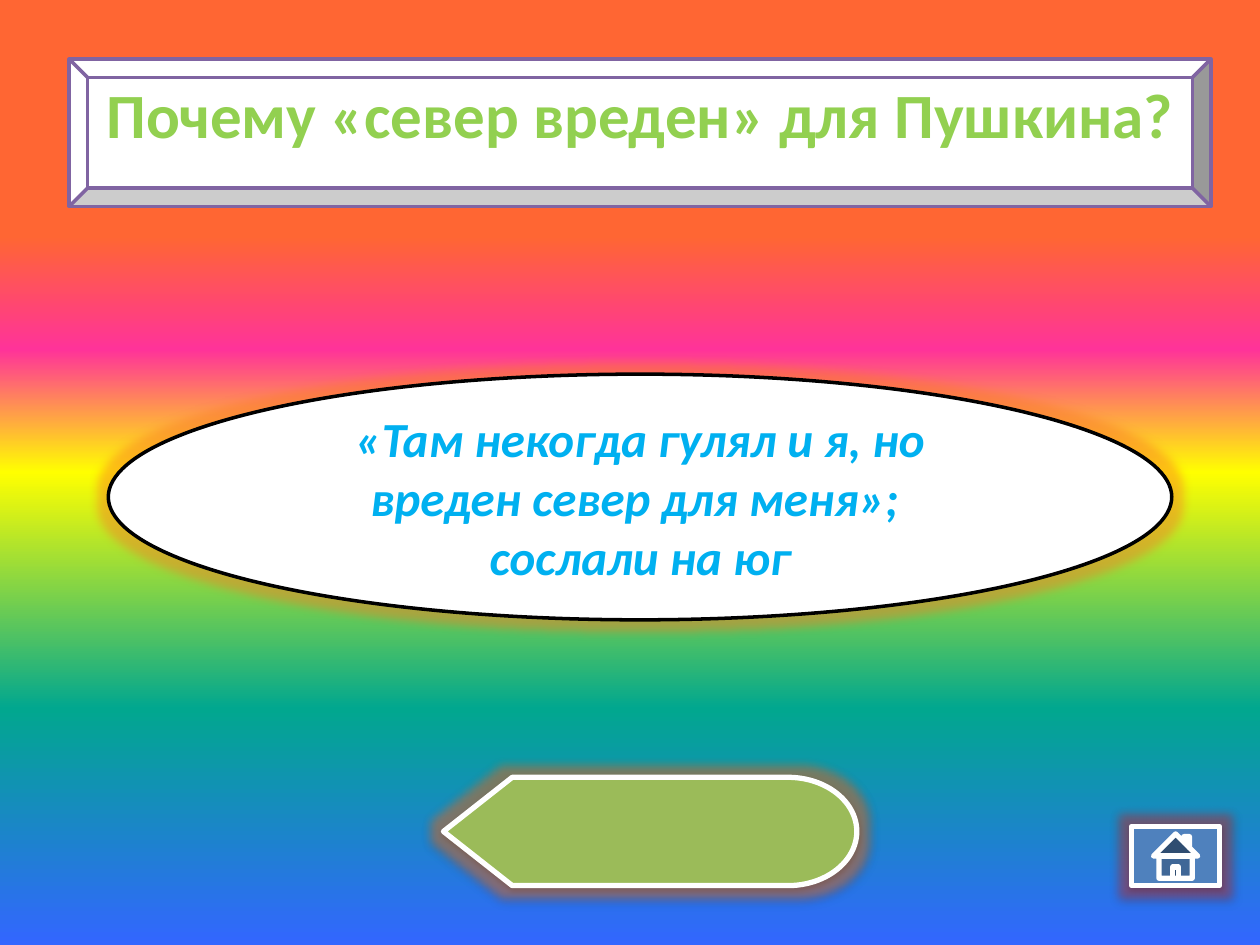
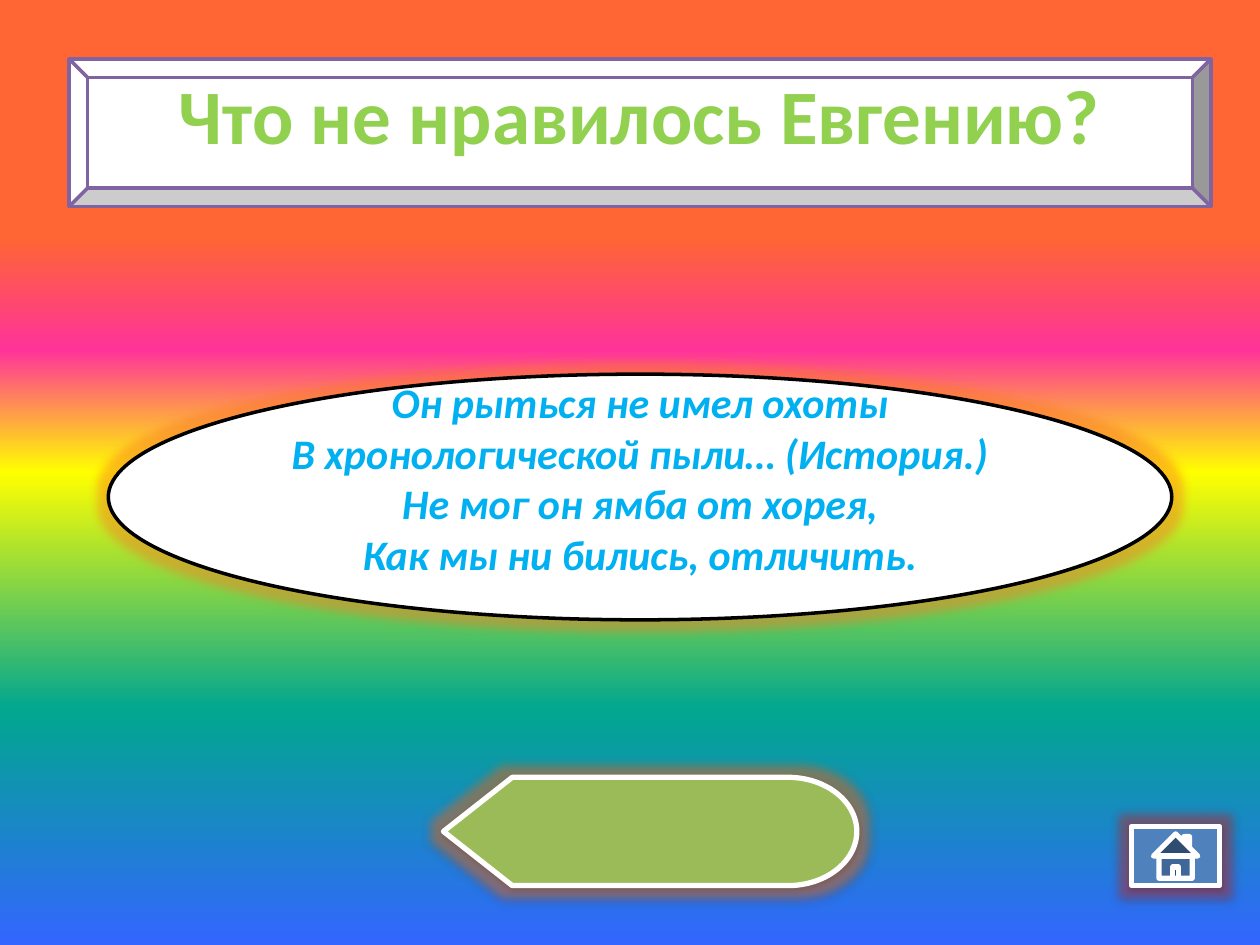
from lxml.etree import SubElement as Sub
from pptx import Presentation
from pptx.dml.color import RGBColor as Rgb
from pptx.enum.shapes import MSO_SHAPE as Kind
from pptx.enum.text import MSO_ANCHOR as Anchor, MSO_AUTO_SIZE as Fit, PP_ALIGN as Align
from pptx.oxml.ns import qn
from pptx.util import Pt

HUES = {
    "white": "FFFFFF", "black": "000000", "violet": "8064A2",
    "lime": "92D050", "sky": "00B0F0", "olive": "9BBB59", "blue": "4F81BD",
    "amber": "F97826", "red": "C8383C",
}
RAINBOW = [(25, "FF6633"), (37, "FF3399"), (50, "FFFF00"), (75, "01A78F"), (100, "3366FF")]

# Boxes in points: left, top, width, height
HEAD = (39.6, 33.8, 652.3, 84.2)
OVAL = (61.9, 213.8, 607.7, 140.4)
BACK = (253.4, 444.2, 236.2, 61.9)
HOME = (646.6, 472.3, 50.4, 33.8)

CARDS = [
    ("Почему «север вреден» для Пушкина?", 36,
     ["«Там некогда гулял и я, но вреден север для меня»; ", "сослали на юг"], 28, 0),
    ("Что не нравилось Евгению?", 44,
     ["Он рыться не имел охоты", "В хронологической пыли… (История.)",
      "Не мог он ямба от хорея,", "Как мы ни бились, отличить."], 24, 22),
]


def hue(name):
    return Rgb.from_string(HUES[name])


def write(shape, lines, size, color, italic=False, pad=(7.2, 3.6, 7.2, 3.6)):
    """Fill a shape with centred bold lines."""
    frame = shape.text_frame
    frame.word_wrap = True
    frame.auto_size = Fit.NONE
    frame.vertical_anchor = Anchor.MIDDLE
    frame.margin_left, frame.margin_top, frame.margin_right, frame.margin_bottom = map(Pt, pad)
    for i, line in enumerate(lines):
        para = frame.add_paragraph() if i else frame.paragraphs[0]
        para.alignment = Align.CENTER
        run = para.add_run()
        run.text = line
        font = run.font
        font.name, font.size, font.bold, font.italic = "Calibri", Pt(size), True, italic
        font.color.rgb = hue(color)


def draw(slide, kind, box, fill, line, width):
    shape = slide.shapes.add_shape(kind, *map(Pt, box))
    shape.shadow.inherit = False
    shape.fill.solid()
    shape.fill.fore_color.rgb = hue(fill)
    shape.line.color.rgb = hue(line)
    shape.line.width = Pt(width)
    return shape


def tint(node, color, alpha):
    paint = Sub(node, qn("a:srgbClr"), val=HUES[color])
    Sub(paint, qn("a:alpha"), val=str(alpha * 1000))


def glow(shape, color, shade=False):
    """Add a soft halo and, on request, a small drop shadow."""
    fx = shape.element.spPr.find(qn("a:effectLst"))
    tint(Sub(fx, qn("a:glow"), rad=str(Pt(11))), color, 45)
    if shade:
        drop = Sub(fx, qn("a:outerShdw"), blurRad=str(Pt(3.1)), dist=str(Pt(1.6)),
                   dir="5400000", rotWithShape="0")
        tint(drop, "black", 38)


def sky(master):
    """Rainbow background for all slides."""
    fill = master.background.fill
    fill.gradient()
    fill.gradient_angle = 270
    stops = master.element.find(".//" + qn("a:gsLst"))
    for stop in list(stops):
        stops.remove(stop)
    for place, color in RAINBOW:
        stop = Sub(stops, qn("a:gs"), pos=str(place * 1000))
        Sub(stop, qn("a:srgbClr"), val=color)


def head(slide, box, text, size):
    """Bevelled plate with the question above its middle."""
    left, top, width, height = box
    plate = draw(slide, Kind.BEVEL, box, "white", "violet", 2)
    title = slide.shapes.title
    title.element.addprevious(plate.element)
    rim = height / 8
    title.left, title.width = Pt(left + rim), Pt(width - 2 * rim)
    title.top, title.height = Pt(top + 1), Pt(height - 24)
    write(title, [text], size, "lime", pad=(7.2, 0, 7.2, 0))


def answer(slide, box, lines, size, lift):
    oval = draw(slide, Kind.FLOWCHART_CONNECTOR, box, "white", "black", 2)
    glow(oval, "amber")
    write(oval, lines, size, "sky", italic=True, pad=(7.2, 3.6, 7.2, 3.6 + lift))


def button(slide, kind, box, fill, halo):
    glow(draw(slide, kind, box, fill, "white", 3), halo, shade=True)


def card(deck, text, size, lines, small, lift):
    slide = deck.slides.add_slide(deck.slide_layouts[5])
    head(slide, HEAD, text, size)
    button(slide, Kind.FLOWCHART_DISPLAY, BACK, "olive", "amber")
    answer(slide, OVAL, lines, small, lift)
    button(slide, Kind.ACTION_BUTTON_HOME, HOME, "blue", "red")


def main():
    deck = Presentation()
    deck.slide_width, deck.slide_height = Pt(720), Pt(540)
    sky(deck.slide_master)
    for item in CARDS:
        card(deck, *item)
    deck.save("out.pptx")


if __name__ == "__main__":
    main()
